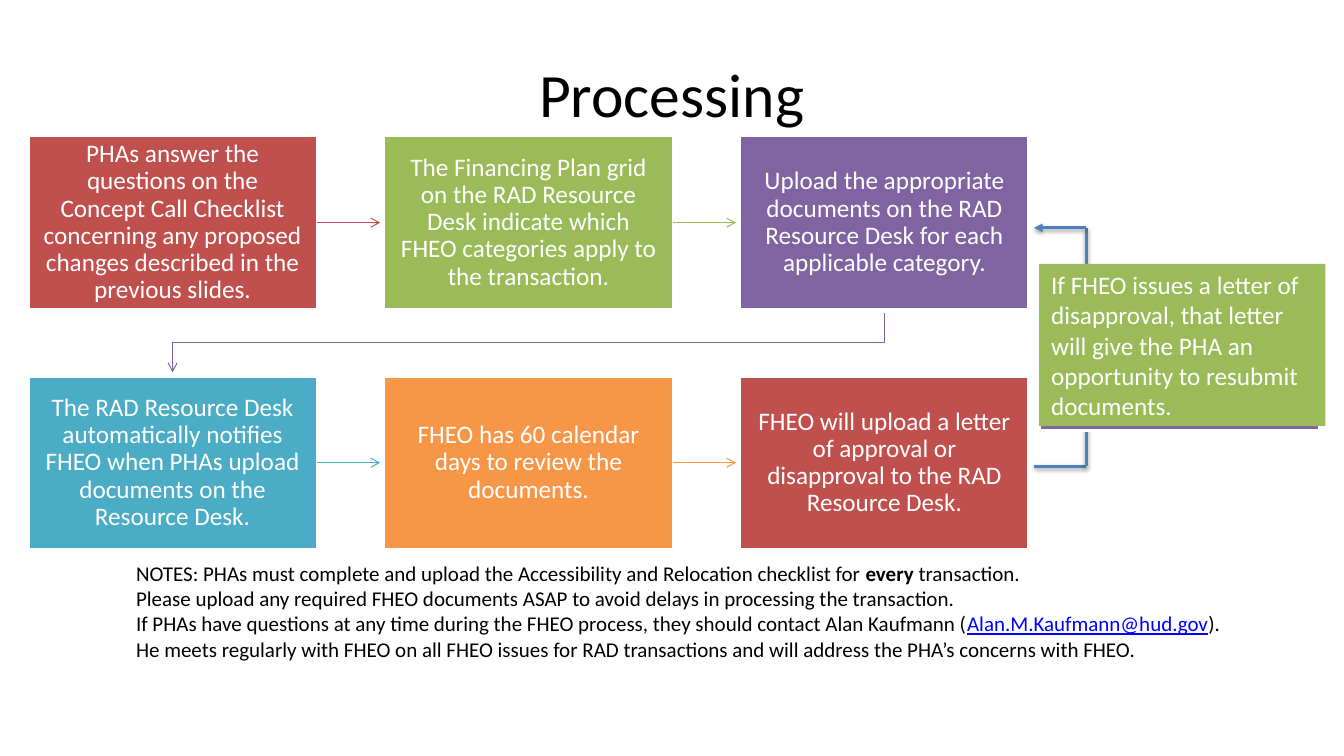
from dataclasses import dataclass

from lxml import etree
from pptx import Presentation
from pptx.dml.color import RGBColor
from pptx.enum.shapes import MSO_CONNECTOR, MSO_SHAPE
from pptx.enum.text import MSO_ANCHOR, MSO_AUTO_SIZE, PP_ALIGN
from pptx.oxml import parse_xml
from pptx.oxml.ns import nsdecls, qn
from pptx.util import Cm, Pt

RECT, STRAIGHT = MSO_SHAPE.RECTANGLE, MSO_CONNECTOR.STRAIGHT
MIDDLE, FIT = MSO_ANCHOR.MIDDLE, MSO_AUTO_SIZE.SHAPE_TO_FIT_TEXT
LEFT, CENTER = PP_ALIGN.LEFT, PP_ALIGN.CENTER
RIGHT_SIDE = 3


@dataclass(frozen=True)
class Theme:
    font: str = "Calibri"
    title: float = 44
    body: float = 18
    note: float = 15
    black: str = "000000"
    white: str = "FFFFFF"
    red: str = "C0504D"
    green: str = "9BBB59"
    purple: str = "8064A2"
    teal: str = "4BACC6"
    orange: str = "F79646"
    blue: str = "4F81BD"
    link: str = "0000FF"


@dataclass(frozen=True)
class Box:
    x: float
    y: float
    w: float
    h: float


@dataclass(frozen=True)
class Step:
    text: str
    color: str


@dataclass(frozen=True)
class Run:
    text: str
    color: str = Theme.black
    bold: bool = False
    underline: bool = False


T = Theme()
STEPS = [
    Step("PHAs answer the questions on the Concept Call Checklist concerning any "
         "proposed changes described in the previous slides.", T.red),
    Step("The Financing Plan grid on the RAD Resource Desk indicate which FHEO "
         "categories apply to the transaction.", T.green),
    Step("Upload the appropriate documents on the RAD Resource Desk for each "
         "applicable category.", T.purple),
    Step("The RAD Resource Desk automatically notifies FHEO when PHAs upload "
         "documents on the Resource Desk.", T.teal),
    Step("FHEO has 60 calendar days to review the documents.", T.orange),
    Step("FHEO will upload a letter of approval or disapproval to the RAD "
         "Resource Desk.", T.red),
]
CALLOUT = ("If FHEO issues a letter of disapproval, that letter will give the PHA "
           "an opportunity to resubmit documents.")
NOTES = [
    [Run("NOTES: PHAs must complete and upload the Accessibility and Relocation "
         "checklist for "), Run("every", bold=True), Run(" transaction.")],
    [Run("Please upload any required FHEO documents ASAP to avoid delays in "
         "processing the transaction.")],
    [Run("If PHAs have questions at any time during the FHEO process, they should "
         "contact Alan Kaufmann ("),
     Run("Alan.M.Kaufmann@hud.gov", color=T.link, underline=True),
     Run("). He meets regularly with FHEO on all FHEO issues for RAD transactions "
         "and will address the PHA’s concerns with FHEO.")],
]

# Step grid, in centimetres
COLS = 3
GRID = Box(0.71, 3.43, 7.28, 4.36)
PITCH_X, PITCH_Y = 8.97, 6.05
TIP_GAP = 0.1


def add_text(p, text: str, *, size: float, color: str, align=LEFT,
             bold: bool = False, underline: bool = False) -> None:
    p.alignment = align
    r = p.add_run()
    r.text = text
    r.font.name, r.font.size = T.font, Pt(size)
    r.font.color.rgb = RGBColor.from_string(color)
    r.font.bold, r.font.underline = bold, underline


def place(sp, box: Box) -> None:
    sp.left, sp.top, sp.width, sp.height = (
        Cm(v) for v in (box.x, box.y, box.w, box.h))


def add_rect(s, box: Box, color: str, *, outlined: bool = True):
    sp = s.shapes.add_shape(RECT, Cm(box.x), Cm(box.y), Cm(box.w), Cm(box.h))
    sp.shadow.inherit = False
    sp.fill.solid()
    sp.fill.fore_color.rgb = RGBColor.from_string(color)
    if outlined:
        style_line(sp, T.white, 2)
    else:
        sp.line.fill.background()
    return sp


def fill_rect(sp, text: str, *, inset: float, align=LEFT, spacing: float = 1.0) -> None:
    tf = sp.text_frame
    tf.word_wrap, tf.vertical_anchor = True, MIDDLE
    tf.margin_left = tf.margin_right = tf.margin_top = tf.margin_bottom = Cm(inset)
    p = tf.paragraphs[0]
    p.line_spacing = spacing
    add_text(p, text, size=T.body, color=T.white, align=align)


def style_line(sp, color: str, width: float, head: str = "") -> None:
    sp.line.color.rgb = RGBColor.from_string(color)
    sp.line.width = Pt(width)
    if head:
        etree.SubElement(sp.line._get_or_add_ln(), qn("a:tailEnd"), type=head)


def add_line(s, start: tuple[float, float], end: tuple[float, float], color: str,
             width: float, *, head: str = "", shadow: bool = False):
    c = s.shapes.add_connector(STRAIGHT, *(Cm(v) for v in start + end))
    style_line(c, color, width, head)
    effect = ('<a:outerShdw blurRad="40000" dist="20000" dir="5400000" rotWithShape="0">'
              '<a:srgbClr val="000000"><a:alpha val="38000"/></a:srgbClr>'
              '</a:outerShdw>') if shadow else ""
    c._element.spPr.append(
        parse_xml(f'<a:effectLst {nsdecls("a")}>{effect}</a:effectLst>'))
    return c


def add_steps(s) -> None:
    for i, step in enumerate(STEPS):
        row, col = divmod(i, COLS)
        x, y = GRID.x + col * PITCH_X, GRID.y + row * PITCH_Y
        sp = add_rect(s, Box(x, y, GRID.w, GRID.h), step.color)
        fill_rect(sp, step.text, inset=0.36, align=CENTER, spacing=0.9)
        if col < COLS - 1:
            mid = y + GRID.h / 2
            arrow = add_line(s, (x + GRID.w, mid), (x + PITCH_X - TIP_GAP, mid),
                             step.color, 0.75, head="arrow")
            arrow.begin_connect(sp, RIGHT_SIDE)


def add_row_return(s) -> None:
    first = GRID.x + GRID.w / 2
    last = first + (COLS - 1) * PITCH_X
    bottom, next_top = GRID.y + GRID.h, GRID.y + PITCH_Y
    turn = (bottom + next_top) / 2
    points = [(last, turn), (first, turn), (first, next_top - TIP_GAP)]
    fb = s.shapes.build_freeform(Cm(last), Cm(bottom + TIP_GAP))
    fb.add_line_segments([(Cm(x), Cm(y)) for x, y in points], close=False)
    sp = fb.convert_to_shape()
    sp.shadow.inherit = False
    sp.fill.background()
    style_line(sp, T.purple, 0.75, "arrow")


def add_resubmit_loop(s) -> None:
    near, far, top, bottom = 26.06, 27.38, 5.74, 11.75
    add_line(s, (near, bottom), (far, bottom), T.blue, 2, shadow=True)
    add_line(s, (far, bottom), (far, top), T.blue, 2, shadow=True)
    add_line(s, (far, top), (near, top), T.blue, 2, head="triangle", shadow=True)
    add_rect(s, Box(26.19, 6.76, 7.06, 4.09), T.purple)
    sp = add_rect(s, Box(26.19, 6.65, 7.21, 4.09), T.green, outlined=False)
    fill_rect(sp, CALLOUT, inset=0.3)


def add_notes(s) -> None:
    tf = s.shapes.add_textbox(Cm(3.18), Cm(14), Cm(28.45), Cm(2.82)).text_frame
    tf.word_wrap, tf.auto_size = True, FIT
    for i, runs in enumerate(NOTES):
        p = tf.add_paragraph() if i else tf.paragraphs[0]
        for run in runs:
            add_text(p, run.text, size=T.note, color=run.color,
                     bold=run.bold, underline=run.underline)


def main() -> None:
    prs = Presentation()
    prs.slide_width, prs.slide_height = Cm(33.87), Cm(19.05)
    s = prs.slides.add_slide(prs.slide_layouts[5])

    # Title
    title = s.shapes.title
    place(title, Box(1.69, 0.76, 30.48, 3.18))
    title.text_frame.vertical_anchor = MIDDLE
    add_text(title.text_frame.paragraphs[0], "Processing",
             size=T.title, color=T.black, align=CENTER)

    # Process flow, resubmission loop and notes
    add_steps(s)
    add_row_return(s)
    add_resubmit_loop(s)
    add_notes(s)
    prs.save("out.pptx")


if __name__ == "__main__":
    main()
